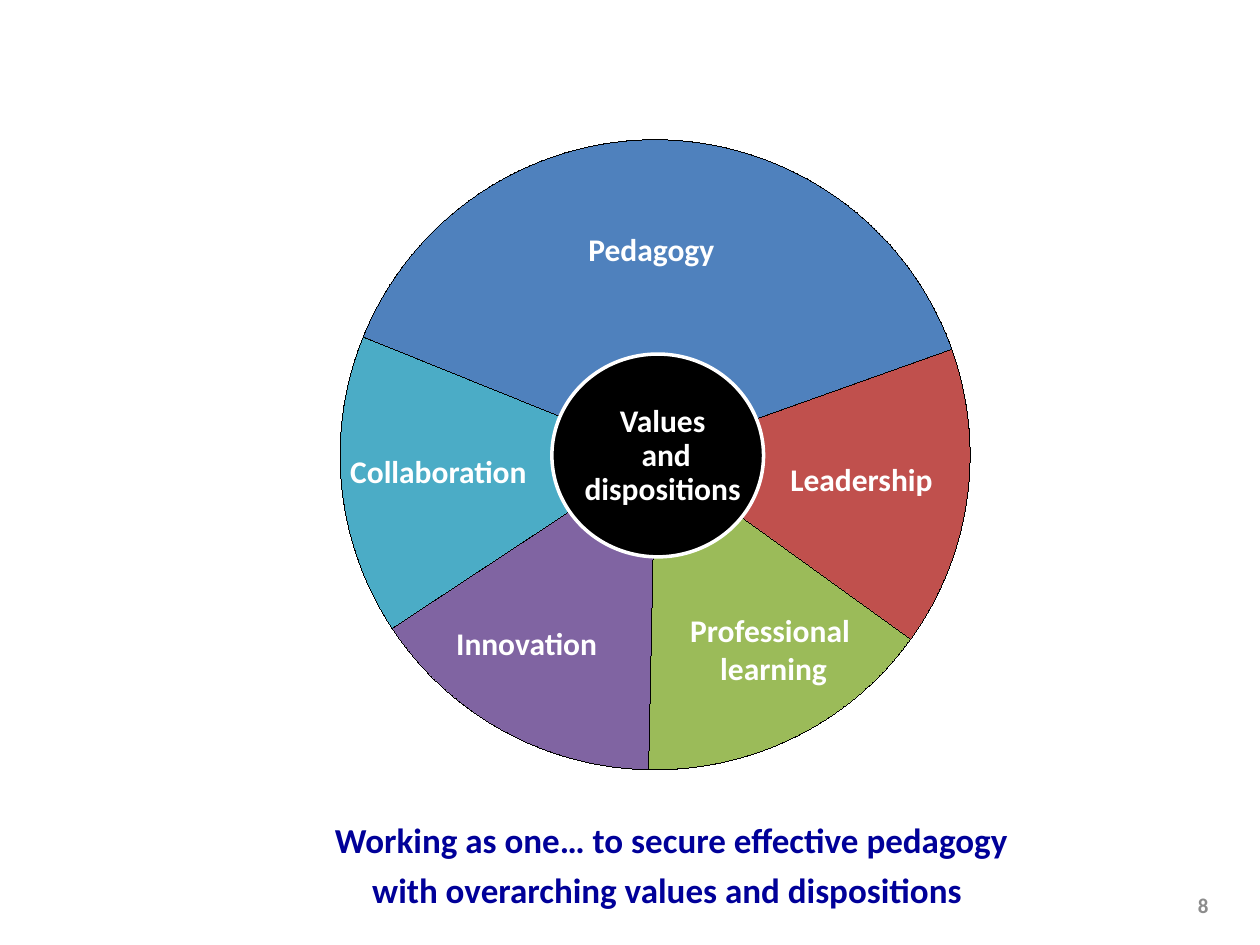
from dataclasses import dataclass
from math import ceil, cos, radians, sin, tan

from lxml.etree import SubElement as Sub
from pptx import Presentation
from pptx.dml.color import RGBColor as Rgb
from pptx.enum.shapes import MSO_SHAPE as Shape
from pptx.enum.text import MSO_ANCHOR as Anchor, MSO_AUTO_SIZE as Auto, PP_ALIGN as Align
from pptx.oxml.ns import qn
from pptx.util import Inches, Pt

COLORS = {
    "blue": "4F81BD",
    "red": "C0504D",
    "green": "9BBB59",
    "purple": "8064A2",
    "teal": "4BACC6",
    "navy": "000099",
    "gray": "8C8C8C",
    "black": "000000",
    "white": "FFFFFF",
}
MID_X, MID_Y, RADIUS = 5.2, 3.61, 2.5
START, SMALL = 202, 55.4
LARGE = 360 - 4 * SMALL
HAIR = 0.01


@dataclass
class Slice:
    color: str
    sweep: float


@dataclass
class Label:
    lines: list[str]
    left: float
    top: float
    width: float = 2.1
    height: float = 0.4
    size: int = 18
    color: str = "white"
    align: Align = Align.CENTER
    anchor: Anchor = Anchor.TOP
    grow: bool = True
    inset: float | None = None
    space: float | None = None


SLICES = [
    Slice("blue", LARGE),
    Slice("red", SMALL),
    Slice("green", SMALL),
    Slice("purple", SMALL),
    Slice("teal", SMALL),
]
LABELS = [
    Label(["Pedagogy"], 4.12, 1.78),
    Label([" Leadership"], 5.76, 3.6),
    Label(["Collaboration"], 2.43, 3.54),
    Label(["Professional ", "learning"], 5.09, 4.8, height=0.71),
    Label(["Innovation"], 3.13, 4.9),
    Label(["Working as one… to secure effective pedagogy"], 2.56, 6.45, 6.11, 0.44,
          20, "navy", Align.LEFT),
    Label(["with overarching values and dispositions"], 2.24, 6.84, 6.11, 0.44,
          20, "navy"),
    Label(["8"], 7.36, 6.98, 2.33, 0.4, 12, "gray", Align.RIGHT, Anchor.MIDDLE, False),
    Label(["Values", " and dispositions"], 4.46, 2.96, 1.6, 1.32,
          anchor=Anchor.MIDDLE, grow=False, inset=0.04, space=0.9),
]


def tint(name: str) -> Rgb:
    return Rgb.from_string(COLORS[name])


def paint(shape, fill: str, line: str, width: float) -> None:
    shape.shadow.inherit = False
    shape.fill.solid()
    shape.fill.fore_color.rgb = tint(fill)
    shape.line.color.rgb = tint(line)
    shape.line.width = Pt(width)


def place(angle: float, shift: float = 0) -> tuple[int, int]:
    turn = radians(angle)
    return (Inches(MID_X + RADIUS * (cos(turn) - shift * sin(turn))),
            Inches(MID_Y + RADIUS * (sin(turn) + shift * cos(turn))))


def arc(start: float, end: float) -> list[tuple[int, int]]:
    points = []
    while abs(end - start) > 0.01:
        step = max(-90, end - start)
        pull = 4 / 3 * tan(radians(step) / 4)
        points += [place(start, pull), place(start + step, -pull), place(start + step)]
        start += step
    return points


def curve(shape) -> None:
    route = next(shape.element.iter(qn("a:path")))
    lines = route.findall(qn("a:lnTo"))[1:]
    for i in range(0, 3 * ceil(len(lines) // 3), 3):
        bend = Sub(route, qn("a:cubicBezTo"))
        lines[i].addprevious(bend)
        for line in lines[i:i + 3]:
            bend.append(line[0])
            route.remove(line)


def draw_slice(slide, part: Slice, start: float) -> None:
    end = start + part.sweep
    pen = slide.shapes.build_freeform(Inches(MID_X), Inches(MID_Y))
    pen.add_line_segments([place(end), *arc(end, start)], close=True)
    wedge = pen.convert_to_shape()
    curve(wedge)
    paint(wedge, part.color, "black", HAIR)


def draw_hub(slide) -> None:
    hub = slide.shapes.add_shape(
        Shape.OVAL, Inches(4.38), Inches(2.81), Inches(1.68), Inches(1.61))
    paint(hub, "black", "white", 2)


def draw_label(slide, label: Label) -> None:
    box = slide.shapes.add_textbox(
        Inches(label.left), Inches(label.top), Inches(label.width), Inches(label.height))
    frame = box.text_frame
    frame.word_wrap = True
    frame.auto_size = Auto.SHAPE_TO_FIT_TEXT if label.grow else Auto.NONE
    frame.vertical_anchor = label.anchor
    if label.inset is not None:
        frame.margin_left = frame.margin_right = Inches(label.inset)
        frame.margin_top = frame.margin_bottom = Inches(label.inset)
    frame.text = "\n".join(label.lines)
    for para in frame.paragraphs:
        para.alignment = label.align
        para.line_spacing = label.space
        para.font.name = "Calibri"
        para.font.size = Pt(label.size)
        para.font.bold = True
        para.font.color.rgb = tint(label.color)


def main() -> None:
    deck = Presentation()
    deck.slide_width, deck.slide_height = Inches(10), Inches(7.5)
    slide = deck.slides.add_slide(deck.slide_layouts[6])
    start = START
    for part in SLICES:
        draw_slice(slide, part, start)
        start += part.sweep
    draw_hub(slide)
    for label in LABELS:
        draw_label(slide, label)
    deck.save("out.pptx")


if __name__ == "__main__":
    main()
